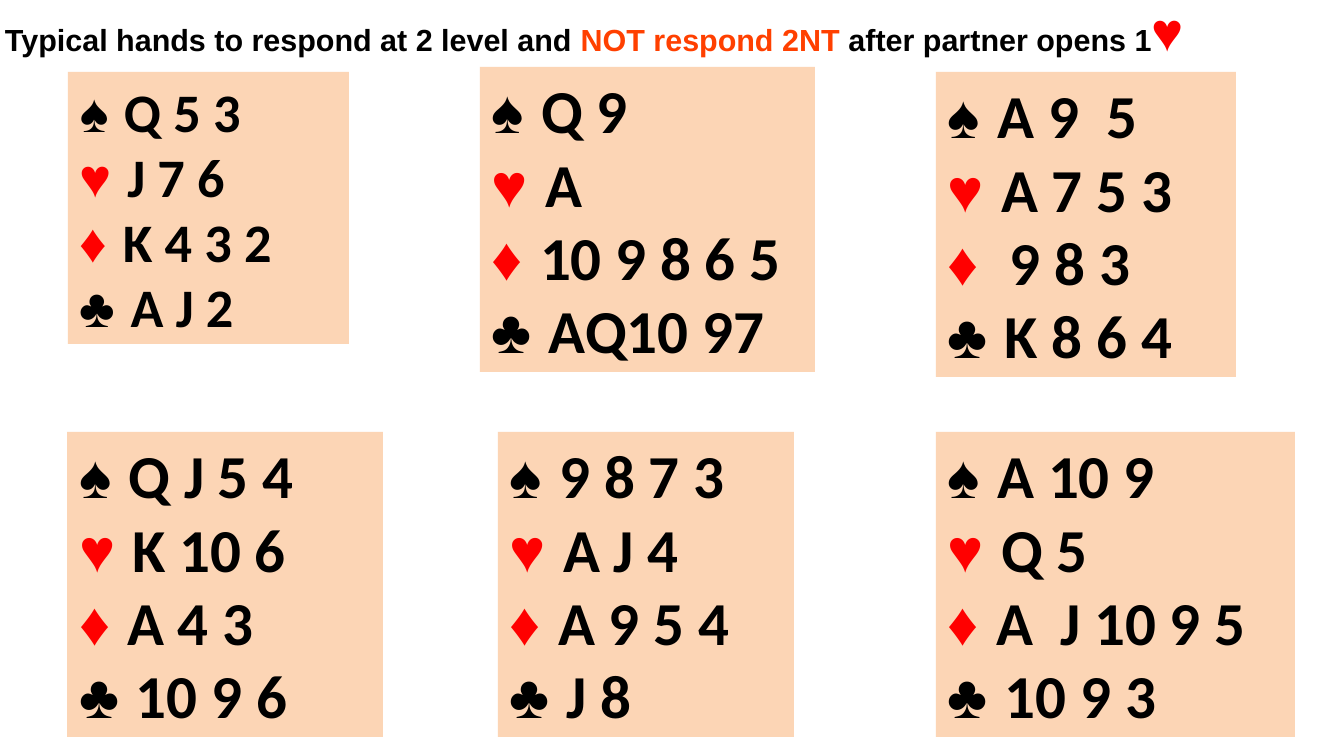
import pptx
import pptx.util
import pptx.dml.color
import pptx.enum.shapes
import pptx.enum.text

THEME = {
    "black": "000000", "red": "FF0000", "orange": "FF4000", "card": "FCD5B5",
    "title": 18, "title_suit": 32, "small": 32, "large": 36,
    "suit_font": "Arial", "rank_font": "Calibri",
}
PX = 914400 / 122


def px(n):
    return pptx.util.Emu(round(n * PX))


def add_text(p, text, size, color="black", font="suit_font", bold=True):
    r = p.add_run()
    r.text = text
    r.font.size = pptx.util.Pt(THEME[size])
    r.font.name = THEME[font]
    r.font.bold = bold
    r.font.color.rgb = pptx.dml.color.RGBColor.from_string(THEME[color])


prs = pptx.Presentation()
prs.slide_width, prs.slide_height = px(1344), px(756)
s = prs.slides.add_slide(prs.slide_layouts[6])

# Title
tf = s.shapes.add_textbox(px(-7), px(-9), px(1297), px(77)).text_frame
tf.word_wrap = True
tf.auto_size = pptx.enum.text.MSO_AUTO_SIZE.SHAPE_TO_FIT_TEXT
p = tf.paragraphs[0]
add_text(p, "Typical hands to respond at 2 level and ", "title")
add_text(p, "NOT respond 2NT ", "title", color="orange")
add_text(p, "after partner opens 1", "title")
add_text(p, "♥", "title_suit", color="red")

# Hands: left, top, width, height, type size, holding in each suit
SUITS = [("♠ ", "black"), ("♥ ", "red"), ("♦ ", "red"), ("♣ ", "black")]
hands = [
    (68, 72, 281, 272, "small", ["Q 5 3", "J 7 6", "K 4 3 2", "A J 2"]),
    (480, 67, 335, 305, "large", ["Q 9", "A", "10 9 8 6 5", "AQ10 97"]),
    (936, 72, 300, 305, "large", ["A 9  5", "A 7 5 3", " 9 8 3", "K 8 6 4"]),
    (67, 432, 316, 305, "large", ["Q J 5 4", "K 10 6", "A 4 3", "10 9 6"]),
    (498, 432, 296, 305, "large", ["9 8 7 3", "A J 4", "A 9 5 4", "J 8"]),
    (936, 432, 359, 305, "large", ["A 10 9", "Q 5", "A  J 10 9 5", "10 9 3"]),
]
for left, top, width, height, size, holdings in hands:
    sp = s.shapes.add_shape(pptx.enum.shapes.MSO_SHAPE.RECTANGLE,
                            px(left), px(top), px(width), px(height))
    sp.shadow.inherit = False
    sp.fill.solid()
    sp.fill.fore_color.rgb = pptx.dml.color.RGBColor.from_string(THEME["card"])
    sp.line.fill.background()
    tf = sp.text_frame
    tf.word_wrap = True
    tf.auto_size = pptx.enum.text.MSO_AUTO_SIZE.SHAPE_TO_FIT_TEXT
    tf.vertical_anchor = pptx.enum.text.MSO_ANCHOR.TOP

    # One line per suit
    for i, ((suit, color), ranks) in enumerate(zip(SUITS, holdings)):
        p = tf.paragraphs[0] if i == 0 else tf.add_paragraph()
        p.alignment = pptx.enum.text.PP_ALIGN.LEFT
        add_text(p, suit, size, color=color, bold=size == "large" or i > 0)
        add_text(p, ranks, size, font="rank_font")

prs.save("out.pptx")
